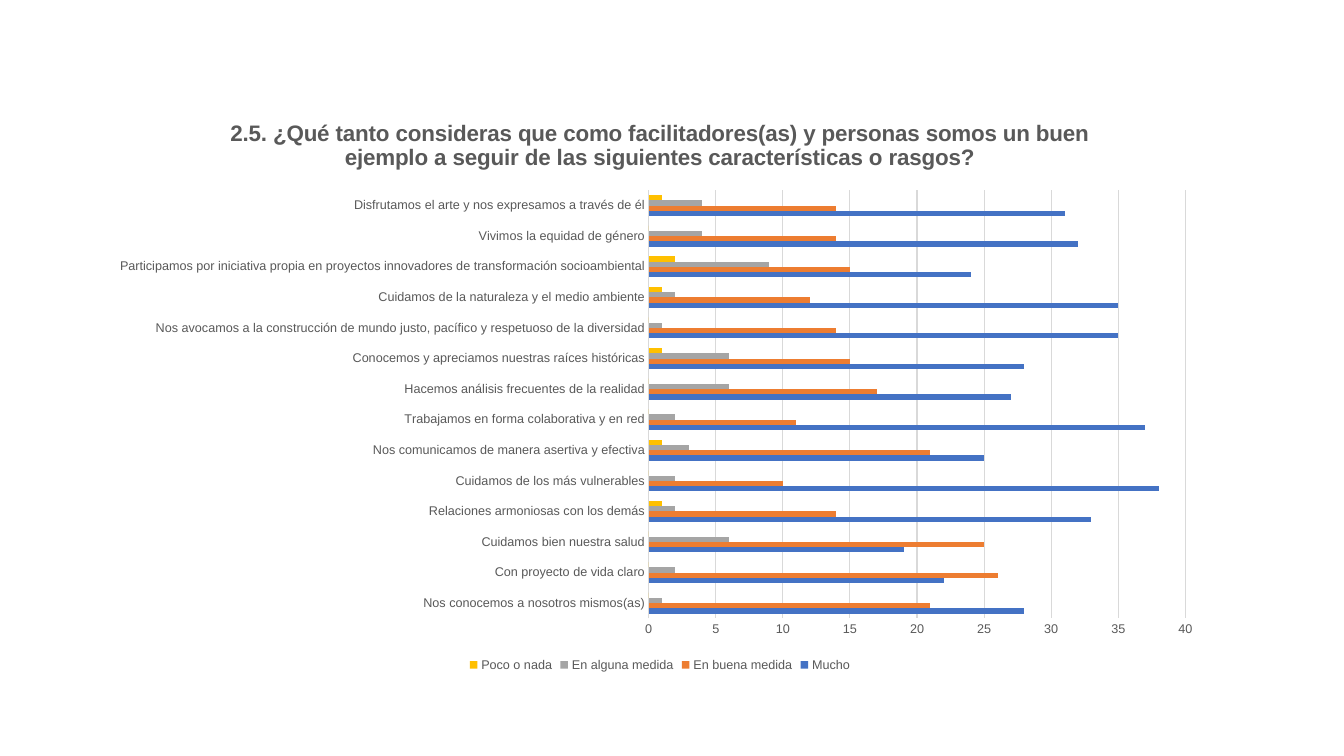
from lxml import etree
from pptx import Presentation
from pptx.chart.data import CategoryChartData
from pptx.dml.color import RGBColor
from pptx.enum.chart import XL_CHART_TYPE, XL_LEGEND_POSITION, XL_TICK_MARK
from pptx.oxml.ns import qn
from pptx.util import Inches, Pt

BAR_CLUSTERED = XL_CHART_TYPE.BAR_CLUSTERED
BOTTOM = XL_LEGEND_POSITION.BOTTOM
NO_TICK = XL_TICK_MARK.NONE

COLORS = {
    "text": "595959",
    "grid": "D9D9D9",
    "Mucho": "4472C4",
    "En buena medida": "ED7D31",
    "En alguna medida": "A5A5A5",
    "Poco o nada": "FFC000",
}
QUESTION = ("2.5. ¿Qué tanto consideras que como facilitadores(as) y personas somos un buen "
            "ejemplo a seguir de las siguientes características o rasgos?")
LEVELS = ["Mucho", "En buena medida", "En alguna medida", "Poco o nada"]

# Each trait with its answers, in the order of LEVELS
ANSWERS = {
    "Nos conocemos a nosotros mismos(as)": (28, 21, 1, 0),
    "Con proyecto de vida claro": (22, 26, 2, 0),
    "Cuidamos bien nuestra salud": (19, 25, 6, 0),
    "Relaciones armoniosas con los demás": (33, 14, 2, 1),
    "Cuidamos de los más vulnerables": (38, 10, 2, 0),
    "Nos comunicamos de manera asertiva y efectiva": (25, 21, 3, 1),
    "Trabajamos en forma colaborativa y en red": (37, 11, 2, 0),
    "Hacemos análisis frecuentes de la realidad": (27, 17, 6, 0),
    "Conocemos y apreciamos nuestras raíces históricas": (28, 15, 6, 1),
    "Nos avocamos a la construcción de mundo justo, pacífico y respetuoso de la diversidad":
        (35, 14, 1, 0),
    "Cuidamos de la naturaleza y el medio ambiente": (35, 12, 2, 1),
    "Participamos por iniciativa propia en proyectos innovadores de transformación socioambiental":
        (24, 15, 9, 2),
    "Vivimos la equidad de género": (32, 14, 4, 0),
    "Disfrutamos el arte y nos expresamos a través de él": (31, 14, 4, 1),
}


def set_font(font, size, bold=False):
    formats = {"name": "Arial", "size": Pt(size), "bold": bold}
    for attribute, value in formats.items():
        setattr(font, attribute, value)
    font.color.rgb = RGBColor.from_string(COLORS["text"])


def set_line(line):
    line.color.rgb = RGBColor.from_string(COLORS["grid"])
    line.width = Pt(0.75)


# Slide
deck = Presentation()
deck.slide_width, deck.slide_height = Inches(13.33), Inches(7.5)
slide = deck.slides.add_slide(deck.slide_layouts[6])

# Survey chart
survey = CategoryChartData(number_format="General")
survey.categories = list(ANSWERS)
for level, counts in zip(LEVELS, zip(*ANSWERS.values())):
    survey.add_series(level, counts)
chart = slide.shapes.add_chart(
    BAR_CLUSTERED, Inches(1), Inches(0.97), Inches(11.09), Inches(5.74), survey).chart
set_font(chart.font, 10)

# Question as title
chart.has_title = True
title = chart.chart_title
title.include_in_layout = False
title.text_frame.text = QUESTION
set_font(title.text_frame.paragraphs[0].runs[0].font, 16, bold=True)

# Bars
bars = chart.plots[0]
bars.gap_width = 182
bars.overlap = 0
bars.vary_by_categories = False
for series in bars.series:
    series.format.fill.solid()
    series.format.fill.fore_color.rgb = RGBColor.from_string(COLORS[series.name])

# Axes
traits, counts_axis = chart.category_axis, chart.value_axis
for axis in (traits, counts_axis):
    axis.major_tick_mark = axis.minor_tick_mark = NO_TICK
    set_font(axis.tick_labels.font, 9)
set_line(traits.format.line)
counts_axis.format.line.fill.background()
counts_axis.has_major_gridlines = True
set_line(counts_axis.major_gridlines.format.line)
for attribute, value in {"minimum_scale": 0, "maximum_scale": 40, "major_unit": 5}.items():
    setattr(counts_axis, attribute, value)

# Legend
chart.has_legend = True
chart.legend.position = BOTTOM
chart.legend.include_in_layout = False
set_font(chart.legend.font, 9)

# Plot area as shares of the chart, leaving the left half to the trait labels
plot_area = bars._element.getparent()
for old_layout in plot_area.findall(qn("c:layout")):
    plot_area.remove(old_layout)
layout = etree.Element(qn("c:layout"))
manual = etree.SubElement(layout, qn("c:manualLayout"))
shares = {"layoutTarget": "inner", "xMode": "edge", "yMode": "edge",
          "x": 0.49, "y": 0.16, "w": 0.48, "h": 0.74}
for tag, value in shares.items():
    etree.SubElement(manual, qn(f"c:{tag}")).set("val", str(value))
plot_area.insert(0, layout)

deck.save("out.pptx")
